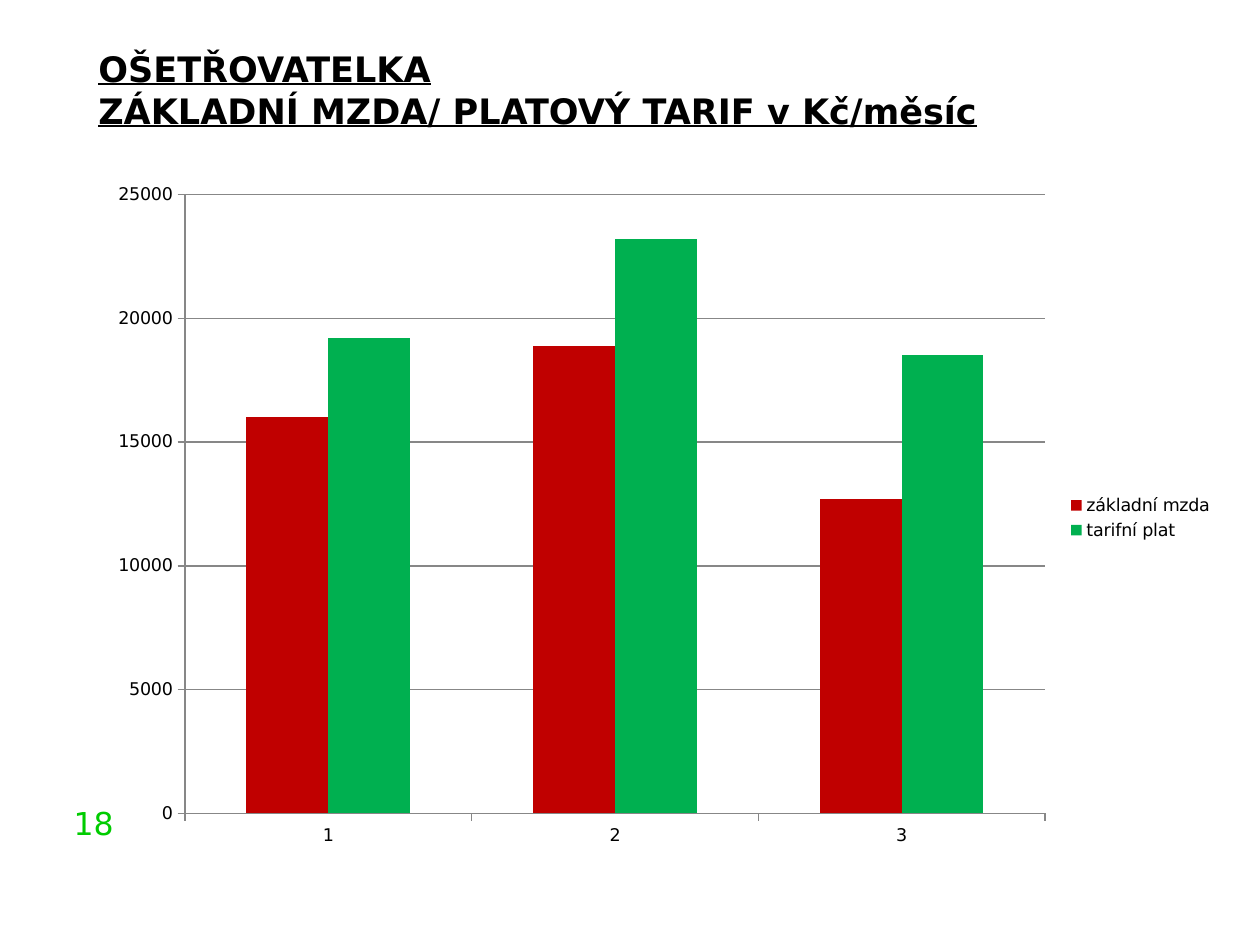
from lxml import etree
from pptx import Presentation
from pptx.chart.data import CategoryChartData
from pptx.dml.color import RGBColor
from pptx.enum import chart as charts, text
from pptx.oxml import ns
from pptx.util import Inches, Pt

FONT = "DejaVu Sans"


def style(font, size, color="000000", bold=False, underline=False):
    font.name, font.size = FONT, Pt(size)
    font.bold, font.underline = bold, underline
    font.color.rgb = RGBColor.from_string(color)


def write(para, words, align=text.PP_ALIGN.LEFT, **look):
    para.alignment = align
    span = para.add_run()
    span.text = words
    style(span.font, **look)


deck = Presentation()
deck.slide_width, deck.slide_height = Inches(10), Inches(7.5)
page = deck.slides.add_slide(deck.slide_layouts[5])

# Title
title = page.shapes.title
title.left, title.top = Inches(0.68), Inches(0.21)
title.width, title.height = Inches(9.04), Inches(1.32)
frame = title.text_frame
frame.word_wrap = True
frame.auto_size = text.MSO_AUTO_SIZE.NONE
frame.vertical_anchor = text.MSO_ANCHOR.MIDDLE
frame.margin_bottom = Inches(0.37)
lines = ["OŠETŘOVATELKA", "ZÁKLADNÍ MZDA/ PLATOVÝ TARIF v\u00a0Kč/měsíc"]
for index, line in enumerate(lines):
    para = frame.add_paragraph() if index else frame.paragraphs[0]
    write(para, line, size=20, bold=True, underline=True)

# Page number
number = page.shapes.add_textbox(Inches(0), Inches(6.33), Inches(1), Inches(0.58))
number.text_frame.word_wrap = True
write(number.text_frame.paragraphs[0], "18", text.PP_ALIGN.RIGHT,
      size=18, color="00CC00")

# Wage chart
wages = [
    ("základní mzda", (16000, 18900, 12700), "C00000"),
    ("tarifní plat", (19200, 23200, 18500), "00B050"),
]
data = CategoryChartData()
data.categories = ["1", "2", "3"]
for name, values, _ in wages:
    data.add_series(name, values)
chart = page.shapes.add_chart(
    charts.XL_CHART_TYPE.COLUMN_CLUSTERED,
    Inches(0.75), Inches(1.38), Inches(8.98), Inches(5.46), data).chart
style(chart.font, 10)
chart.has_title = False
chart.has_legend = True
chart.legend.position = charts.XL_LEGEND_POSITION.RIGHT
chart.legend.include_in_layout = False

plot = chart.plots[0]
plot.gap_width, plot.overlap = 150, 0
plot.vary_by_categories = False
for series, (_, _, color) in zip(plot.series, wages):
    series.format.fill.solid()
    series.format.fill.fore_color.rgb = RGBColor.from_string(color)

scale = chart.value_axis
scale.minimum_scale, scale.maximum_scale, scale.major_unit = 0, 25000, 5000
scale.has_major_gridlines = True
for axis in (chart.category_axis, scale):
    axis.major_tick_mark = charts.XL_TICK_MARK.OUTSIDE
    axis.minor_tick_mark = charts.XL_TICK_MARK.NONE
for rule in (chart.category_axis, scale, scale.major_gridlines):
    rule.format.line.color.rgb = RGBColor.from_string("878787")
    rule.format.line.width = Pt(0.75)

# Fixed plot area inside the chart frame, as shares of its size
area = plot._element.getparent()
for old in area.findall(ns.qn("c:layout")):
    area.remove(old)
layout = etree.Element(ns.qn("c:layout"))
manual = etree.SubElement(layout, ns.qn("c:manualLayout"))
for tag, value in [("layoutTarget", "inner"), ("xMode", "edge"), ("yMode", "edge"),
                   ("x", 0.08), ("y", 0.03), ("w", 0.76), ("h", 0.9)]:
    etree.SubElement(manual, ns.qn("c:" + tag)).set("val", str(value))
area.insert(0, layout)

deck.save("out.pptx")
